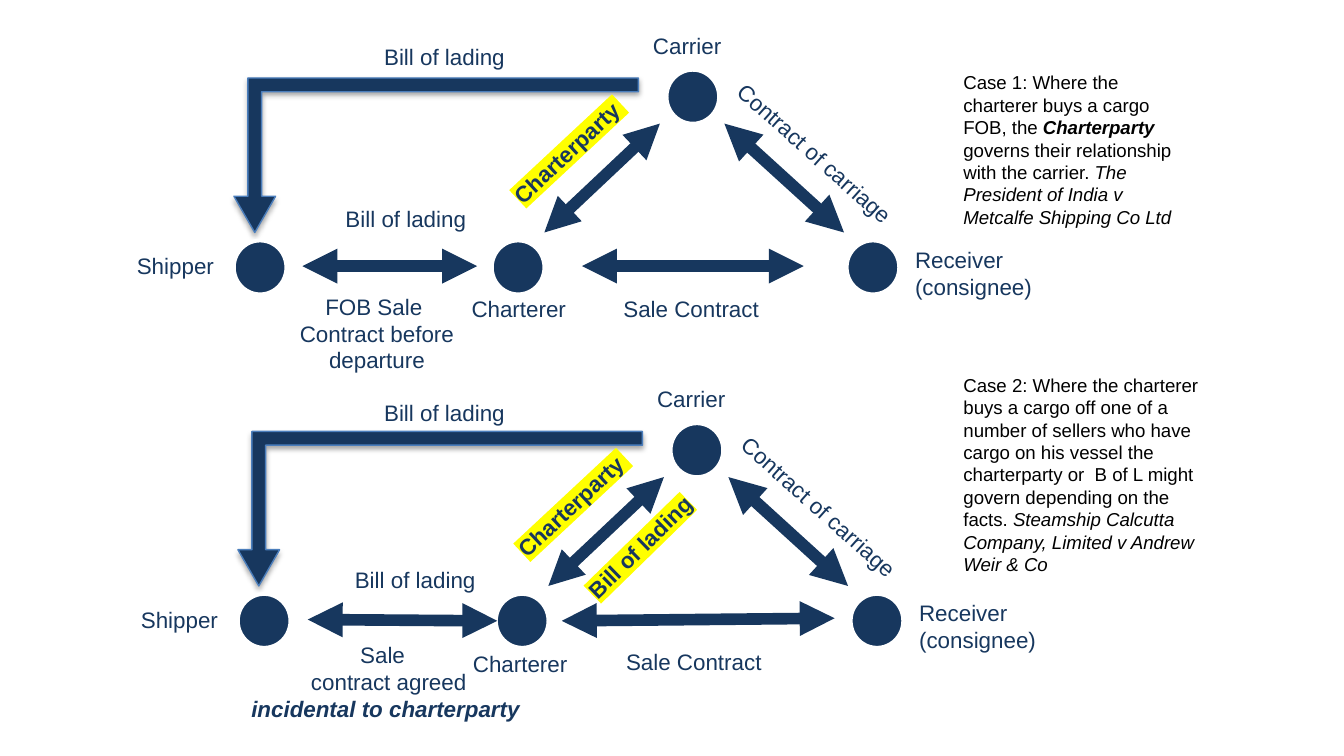
from typing import NamedTuple

from lxml.etree import SubElement
from pptx import Presentation
from pptx.dml.color import RGBColor
from pptx.enum.shapes import MSO_CONNECTOR, MSO_SHAPE
from pptx.enum.text import MSO_AUTO_SIZE, PP_ALIGN
from pptx.oxml import parse_xml
from pptx.oxml.ns import nsdecls, qn
from pptx.util import Inches, Pt

NAVY = RGBColor(0x17, 0x37, 0x5E)
EDGE = RGBColor(0x4B, 0x7E, 0xBC)
WHITE = RGBColor(0xFF, 0xFF, 0xFF)
BLACK = RGBColor(0, 0, 0)
YELLOW = RGBColor(0xFF, 0xFF, 0)
FONT = "Arial"


class Run(NamedTuple):
    text: str
    bold: bool = False
    italic: bool = False


class Label(NamedTuple):
    left: float
    top: float
    width: float
    text: str
    center: bool = False
    turn: float = 0


class Link(NamedTuple):
    x1: float
    y1: float
    x2: float
    y2: float
    weight: float = 6.25


# Parts that both cases share, placed for case 1
NODES = [(4.96, 0.52), (3.66, 1.79), (6.3, 1.79), (1.74, 1.79)]
LABELS = [
    Label(4.76, 0.19, 0.98, "Carrier"),
    Label(5.22, 1.02, 1.75, "Contract of carriage", turn=41.7),
    Label(6.71, 1.78, 1.52, "Receiver\n(consignee)"),
    Label(0.92, 1.83, 0.9, "Shipper"),
]
LINKS = [Link(4.05, 1.73, 4.91, 0.92), Link(6.28, 1.73, 5.39, 0.92, 6.5)]
SHIFT = (0.03, 2.63)

# Parts that differ from case to case
SALES = [
    Link(4.33, 1.98, 5.98, 1.98), Link(2.25, 1.98, 3.55, 1.98),
    Link(4.18, 4.62, 6.21, 4.6), Link(2.29, 4.61, 3.7, 4.62),
]
NOTES = [
    Label(4.54, 2.15, 1.73, "Sale Contract"),
    Label(3.41, 2.15, 0.92, "Charterer"),
    Label(1.94, 2.13, 1.73, "FOB Sale \nContract before departure", True),
    Label(2.76, 0.27, 1.7, "Bill of lading"),
    Label(2.17, 1.48, 1.7, "Bill of lading", True),
    Label(4.56, 4.77, 1.37, "Sale Contract"),
    Label(3.42, 4.79, 0.92, "Charterer"),
    Label(2.76, 2.92, 1.7, "Bill of lading"),
    Label(2.16, 4.16, 1.86, "Bill of lading", True),
]
MARKED = [
    Label(3.45, 0.97, 1.56, "Charterparty ", True, 316.9),
    Label(3.48, 3.6, 1.56, "Charterparty ", True, 316.9),
    Label(3.83, 3.92, 1.86, "Bill of lading", True, 315.7),
]
AGREED = [
    [Run("Sale ")],
    [Run(" contract agreed "), Run("incidental to charterparty", True, True)],
]
CASE_1 = [[
    Run("Case 1: Where the charterer buys a cargo FOB, the "),
    Run("Charterparty", True, True),
    Run(" governs their relationship with the carrier. "),
    Run("The President of India v Metcalfe Shipping Co Ltd", italic=True),
]]
CASE_2 = [[
    Run("Case 2: Where the charterer buys a cargo off one of a number of "
        "sellers who have cargo on his vessel the charterparty or  B of L "
        "might govern depending on the facts. "),
    Run("Steamship Calcutta Company, Limited v Andrew Weir & Co", italic=True),
]]


def write(slide, left: float, top: float, width: float, height: float,
          paras: list[list[Run]], *, size: float = 12,
          color: RGBColor = NAVY, center: bool = False, turn: float = 0,
          mark: RGBColor | None = None) -> None:
    """Add a text box; mark is the highlight behind its words."""
    box = slide.shapes.add_textbox(
        Inches(left), Inches(top), Inches(width), Inches(height))
    box.rotation = turn
    frame = box.text_frame
    frame.word_wrap = True
    frame.auto_size = MSO_AUTO_SIZE.SHAPE_TO_FIT_TEXT
    for i, runs in enumerate(paras):
        para = frame.paragraphs[0] if i == 0 else frame.add_paragraph()
        para.alignment = PP_ALIGN.CENTER if center else PP_ALIGN.LEFT
        for part in runs:
            run = para.add_run()
            run.text = part.text
            font = run.font
            font.name, font.size = FONT, Pt(size)
            font.bold, font.italic = part.bold, part.italic
            font.color.rgb = color
            if mark is not None:
                fill = run._r.rPr.find(qn("a:solidFill"))
                fill.addnext(parse_xml(
                    f'<a:highlight {nsdecls("a")}>'
                    f'<a:srgbClr val="{mark}"/></a:highlight>'))


def add_label(slide, label: Label, dx: float = 0, dy: float = 0,
              mark: RGBColor | None = None) -> None:
    lines = label.text.split("\n")
    paras = [[Run(line, bold=mark is not None)] for line in lines]
    height = 0.3 + 0.2 * (len(lines) - 1)
    write(slide, label.left + dx, label.top + dy, label.width, height, paras,
          center=label.center, turn=label.turn, mark=mark)


def add_link(slide, link: Link, dx: float = 0, dy: float = 0) -> None:
    """Draw a line with an arrowhead at both ends."""
    line = slide.shapes.add_connector(
        MSO_CONNECTOR.STRAIGHT, Inches(link.x1 + dx), Inches(link.y1 + dy),
        Inches(link.x2 + dx), Inches(link.y2 + dy))
    line.line.color.rgb = NAVY
    line.line.width = Pt(link.weight)
    for end in ("a:headEnd", "a:tailEnd"):
        SubElement(line.line._ln, qn(end), type="triangle")
    SubElement(line._element.spPr, qn("a:effectLst"))


def add_solid(slide, kind: MSO_SHAPE, left: float, top: float, width: float,
              height: float, edge: RGBColor, weight: float):
    shape = slide.shapes.add_shape(
        kind, Inches(left), Inches(top), Inches(width), Inches(height))
    shape.shadow.inherit = False
    shape.fill.solid()
    shape.fill.fore_color.rgb = NAVY
    shape.line.color.rgb = edge
    shape.line.width = Pt(weight)
    return shape


def add_bend(slide, left: float, top: float) -> None:
    """Draw the bent arrow from carrier to shipper, with a soft shadow."""
    bend = add_solid(slide, MSO_SHAPE.BENT_UP_ARROW, left, top, 3.01, 1.15,
                     EDGE, 0.75)
    bend.rotation = 180
    for i, value in enumerate((0.089, 0.135, 0.235)):
        bend.adjustments[i] = value
    bend._element.spPr.find(qn("a:effectLst")).append(parse_xml(
        f'<a:outerShdw {nsdecls("a")} blurRad="{Pt(3.1)}" dist="{Pt(1.8)}" '
        'dir="5400000" rotWithShape="0"><a:srgbClr val="000000">'
        '<a:alpha val="35000"/></a:srgbClr></a:outerShdw>'))


def add_case(slide, dx: float, dy: float) -> None:
    """Draw the parts of the diagram that both cases share."""
    for link in LINKS:
        add_link(slide, link, dx, dy)
    add_bend(slide, 1.74 + dx, 0.58 + dy)
    for left, top in NODES:
        add_solid(slide, MSO_SHAPE.OVAL, left + dx, top + dy, 0.39, 0.4,
                  WHITE, 2)
    for label in LABELS:
        add_label(slide, label, dx, dy)


def main() -> None:
    deck = Presentation()
    deck.slide_width = Inches(10)
    deck.slide_height = deck.slide_width * 9 // 16
    slide = deck.slides.add_slide(deck.slide_layouts[6])
    add_case(slide, 0, 0)
    add_case(slide, *SHIFT)
    for link in SALES:
        add_link(slide, link)
    for label in NOTES:
        add_label(slide, label)
    for label in MARKED:
        add_label(slide, label, mark=YELLOW)
    write(slide, 1.77, 4.72, 2.2, 0.71, AGREED, center=True)
    write(slide, 7.07, 0.48, 1.77, 1.28, CASE_1, size=10, color=BLACK)
    write(slide, 7.07, 2.73, 2.02, 1.62, CASE_2, size=10, color=BLACK)
    deck.save("out.pptx")


if __name__ == "__main__":
    main()
